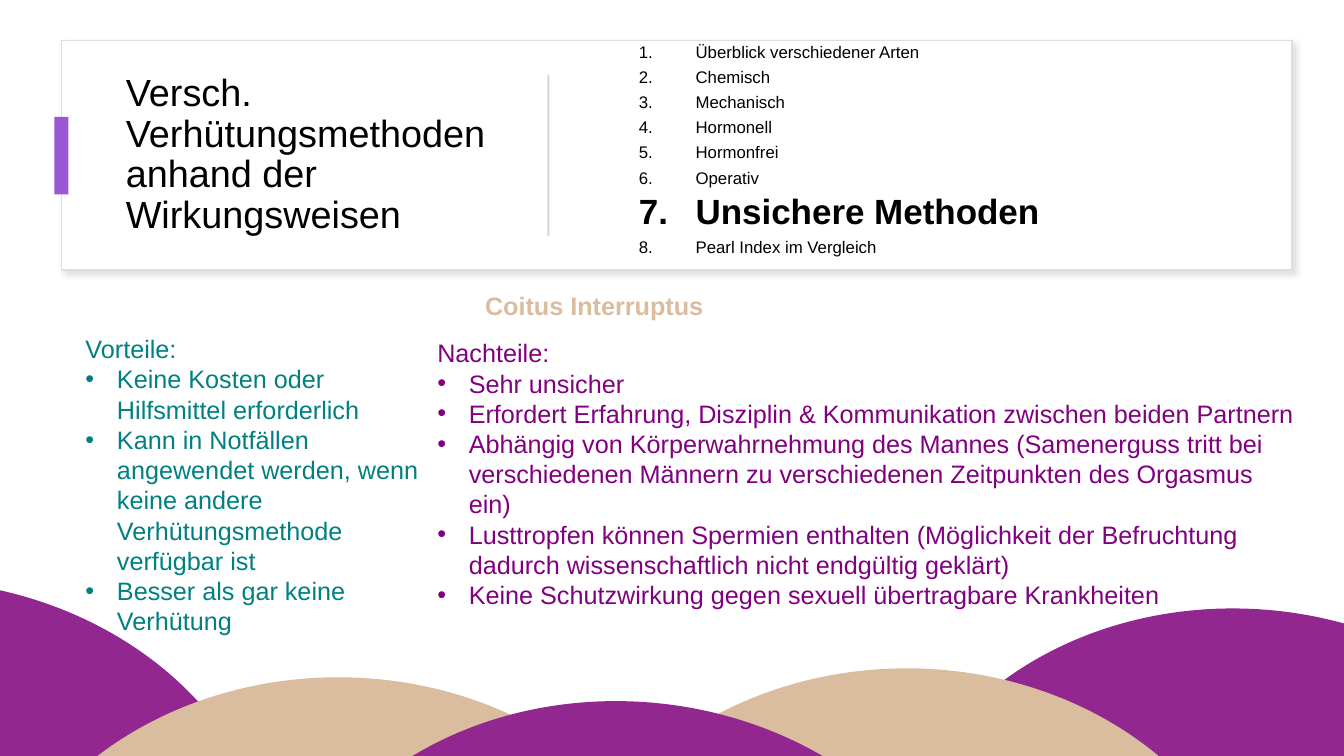
import pptx
import pptx.dml.color
import pptx.enum.shapes
import pptx.enum.text
import pptx.oxml
import pptx.oxml.ns
import pptx.util

# Content
FONT = "Arial"
TITLE = "Versch. Verhütungsmethoden anhand der Wirkungsweisen"
AGENDA = [
    "Überblick verschiedener Arten", "Chemisch", "Mechanisch", "Hormonell",
    "Hormonfrei", "Operativ", "Unsichere Methoden", "Pearl Index im Vergleich",
]
CURRENT = "Unsichere Methoden"
METHOD = "Coitus Interruptus"
# heading, colour, (left, top, width, height), points
COLUMNS = [
    ("Vorteile:", "008080", (54, 234.7, 261.4, 225.4), [
        "Keine Kosten oder Hilfsmittel erforderlich",
        "Kann in Notfällen angewendet werden, wenn keine andere "
        "Verhütungsmethode verfügbar ist",
        "Besser als gar keine Verhütung",
    ]),
    ("Nachteile:", "800080", (305.3, 237.6, 628.6, 203.8), [
        "Sehr unsicher",
        "Erfordert Erfahrung, Disziplin & Kommunikation zwischen beiden Partnern",
        "Abhängig von Körperwahrnehmung des Mannes (Samenerguss tritt bei "
        "verschiedenen Männern zu verschiedenen Zeitpunkten des Orgasmus ein)",
        "Lusttropfen können Spermien enthalten (Möglichkeit der Befruchtung "
        "dadurch wissenschaftlich nicht endgültig geklärt)",
        "Keine Schutzwirkung gegen sexuell übertragbare Krankheiten",
    ]),
]
PURPLE, SAND = "92278F", "DABC9E"
HILL_SIZE = (513.4, 437)
# left, top, rotation, colour; back to front
HILLS = [
    (-315.4, 414.7, 4.8, PURPLE),
    (-15.1, 483.8, 0, SAND),
    (630.7, 434.9, 4.8, PURPLE),
    (391, 477.4, 0, SAND),
    (190.1, 501.1, 4.8, PURPLE),
]
SHAPES = pptx.enum.shapes.MSO_SHAPE
MIDDLE = pptx.enum.text.MSO_ANCHOR.MIDDLE

deck = pptx.Presentation()
deck.slide_width, deck.slide_height = pptx.util.Pt(960), pptx.util.Pt(540)
page = deck.slides.add_slide(deck.slide_layouts[6])


def colour(hex_value):
    return pptx.dml.color.RGBColor.from_string(hex_value)


def add_xml(parent, xml):
    element = pptx.oxml.parse_xml(
        xml.replace(" ", f" {pptx.oxml.ns.nsdecls('a')} ", 1))
    parent.append(element)


def add_shape(kind, bounds, fill, rotation=0):
    shape = page.shapes.add_shape(kind, *map(pptx.util.Pt, bounds))
    shape.shadow.inherit = False
    shape.fill.solid()
    shape.fill.fore_color.rgb = colour(fill)
    shape.line.fill.background()
    shape.rotation = rotation
    return shape


def add_text_box(bounds, anchor=pptx.enum.text.MSO_ANCHOR.TOP):
    box = page.shapes.add_textbox(*map(pptx.util.Pt, bounds))
    box.text_frame.word_wrap = True
    box.text_frame.vertical_anchor = anchor
    return box.text_frame


def add_para(frame, text, size, hex_value, bold=False, bullet=None, indent=0, hang=0):
    para = frame.paragraphs[0]
    if para.runs:
        para = frame.add_paragraph()
    if bullet:
        properties = para._p.get_or_add_pPr()
        properties.set("marL", str(pptx.util.Pt(indent)))
        properties.set("indent", str(-pptx.util.Pt(hang)))
        add_xml(properties, f'<a:buFont typeface="{FONT}"/>')
        add_xml(properties, bullet)
    span = para.add_run()
    span.text = text
    span.font.name = FONT
    span.font.size = pptx.util.Pt(size)
    span.font.bold = bold
    span.font.color.rgb = colour(hex_value)
    return para


# Header card with its shadow
card = add_shape(SHAPES.RECTANGLE, (43.9, 28.8, 879.1, 164.2), "FFFFFF")
card.line.color.rgb = colour("DEDEDE")
card.line.width = pptx.util.Pt(1)
effects = card._element.spPr.find(pptx.oxml.ns.qn("a:effectLst"))
add_xml(effects, '<a:outerShdw blurRad="50800" dist="38100" dir="2700000" algn="tl" '
                 'rotWithShape="0"><a:srgbClr val="CABECD"><a:alpha val="50000"/>'
                 '</a:srgbClr></a:outerShdw>')

# Title, accent bar and divider
title = add_text_box((82.8, 46.1, 288, 129.6), MIDDLE)
add_para(title, TITLE, 27, "000000").line_spacing = 0.9
add_shape(SHAPES.RECTANGLE, (38.9, 83.5, 10.1, 55.4), "9B57D3")
add_shape(SHAPES.RECTANGLE, (391, 53.3, 1.4, 115.2), "D5D5D5")

# Agenda with the current chapter enlarged
agenda = add_text_box((413.3, 28.8, 481, 157.7), MIDDLE)
for number, chapter in enumerate(AGENDA):
    current = chapter == CURRENT
    para = add_para(agenda, chapter, 25 if current else 12, "000000", current,
                    '<a:buAutoNum type="arabicPeriod"/>', 76.5, 40.5)
    para.line_spacing = 0.9
    para.space_before = pptx.util.Pt(5 if number else 0)

# Method heading
heading = add_text_box((-15.1, 203.8, 879.1, 28.8))
add_para(heading, METHOD, 18, SAND, True).alignment = pptx.enum.text.PP_ALIGN.CENTER

# Hills along the bottom edge
for left, top, rotation, fill in HILLS:
    add_shape(SHAPES.OVAL, (left, top, *HILL_SIZE), fill, rotation)

# Advantages and disadvantages
for label, hex_value, bounds, points in COLUMNS:
    column = add_text_box(bounds)
    add_para(column, label, 18, hex_value)
    for point in points:
        add_para(column, point, 18, hex_value, False, '<a:buChar char="•"/>', 22.5, 22.5)

deck.save("out.pptx")
